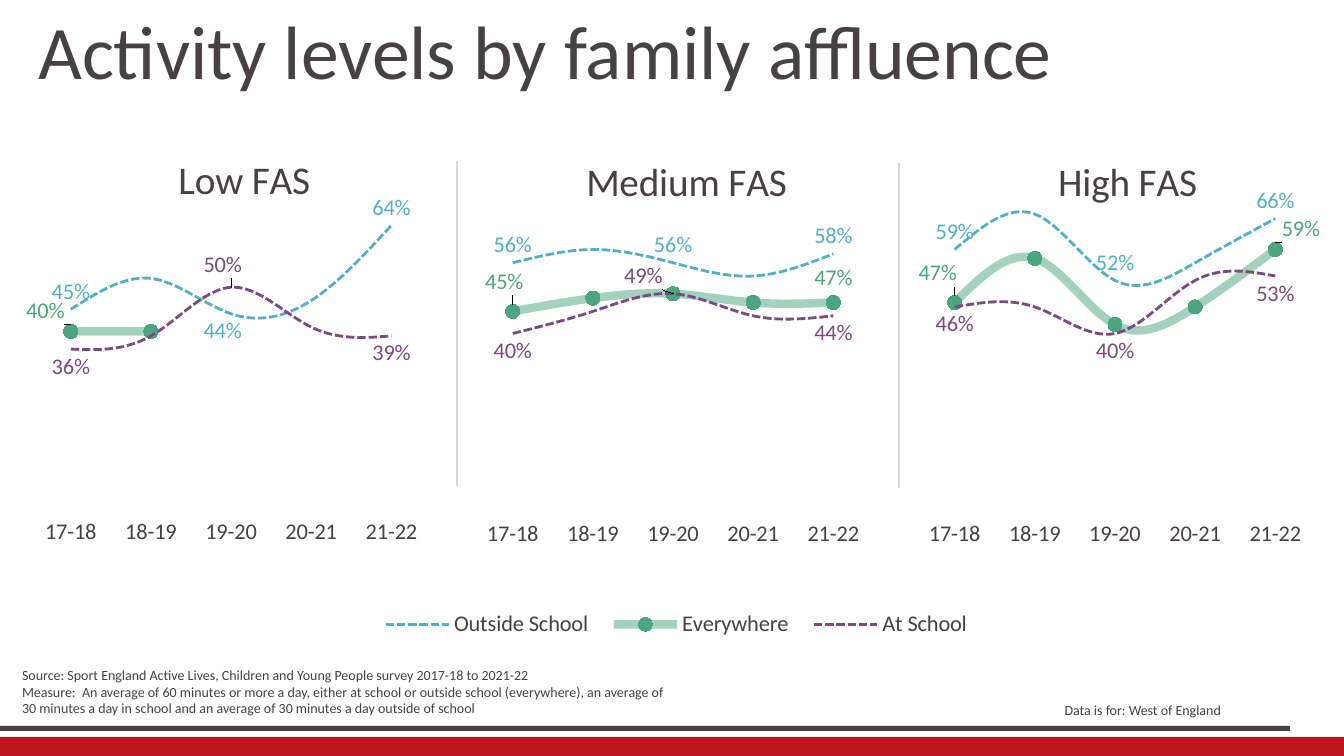
from pptx import Presentation
from pptx.chart.data import CategoryChartData
from pptx.dml.color import RGBColor
from pptx.enum.chart import (XL_CHART_TYPE, XL_LABEL_POSITION, XL_LEGEND_POSITION,
                             XL_MARKER_STYLE, XL_TICK_MARK)
from pptx.enum.dml import MSO_LINE
from pptx.enum.shapes import MSO_CONNECTOR, MSO_SHAPE
from pptx.enum.text import MSO_ANCHOR, PP_ALIGN
from pptx.oxml import parse_xml
from pptx.oxml.ns import nsdecls, qn
from pptx.util import Inches, Pt

COLORS = {"ink": "484043", "red": "BD1622", "rule": "DCD7D9",
          "outside": "53B0C2", "everywhere": "4BA57E", "school": "7C4982"}
ABOVE, BELOW = XL_LABEL_POSITION.ABOVE, XL_LABEL_POSITION.BELOW
LEFT, RIGHT, TOP = PP_ALIGN.LEFT, PP_ALIGN.RIGHT, MSO_ANCHOR.TOP
LINE_CHART, CIRCLE = XL_CHART_TYPE.LINE, XL_MARKER_STYLE.CIRCLE
NO_MARKER, NO_TICK = XL_MARKER_STYLE.NONE, XL_TICK_MARK.NONE
TICK_OUT, LEGEND_BOTTOM = XL_TICK_MARK.OUTSIDE, XL_LEGEND_POSITION.BOTTOM
DASH, RECTANGLE = MSO_LINE.SQUARE_DOT, MSO_SHAPE.RECTANGLE
STRAIGHT = MSO_CONNECTOR.STRAIGHT
GRID = 120
YEARS = ["17-18", "18-19", "19-20", "20-21", "21-22"]
PLOT = (0.02, 0.08, 0.94, 0.79)


def color(name):
    """Return the named palette colour."""
    return RGBColor.from_string(COLORS[name])


def set_layout(element, index, values, edge=True, inner=False):
    """Place a chart part at the given fractions of its chart."""
    for old in element.findall(qn("c:layout")):
        element.remove(old)
    tags = ['<c:layoutTarget val="inner"/>'] if inner else []
    if edge:
        tags += ['<c:xMode val="edge"/>', '<c:yMode val="edge"/>']
    tags += [f'<c:{key} val="{value}"/>' for key, value in zip("xywh", values)]
    element.insert(index, parse_xml(
        f'<c:layout {nsdecls("c")}><c:manualLayout>{"".join(tags)}'
        '</c:manualLayout></c:layout>'))


class SlideBuilder:
    """Holds the font and the current slide, measured in 120 columns and rows."""

    font_name = "Calibri"

    def __init__(self, presentation):
        """Add a slide with a title to the presentation."""
        self.column = presentation.slide_width / GRID
        self.row = presentation.slide_height / GRID
        self.slide = presentation.slides.add_slide(presentation.slide_layouts[5])
        self.shapes = self.slide.shapes

    def box(self, left, top, width, height):
        """Turn grid units into slide lengths."""
        return (round(left * self.column), round(top * self.row),
                round(width * self.column), round(height * self.row))

    def style(self, font, size, name="ink"):
        """Apply the slide font."""
        font.name, font.size, font.bold = self.font_name, Pt(size), False
        font.color.rgb = color(name)

    def fill_text(self, frame, text, size=10, align=LEFT, spacing=None):
        """Fill a text frame with one paragraph for each line."""
        frame.word_wrap, frame.vertical_anchor = True, TOP
        for number, line in enumerate(text.split("\n")):
            paragraph = frame.add_paragraph() if number else frame.paragraphs[0]
            paragraph.text, paragraph.alignment = line, align
            if spacing:
                paragraph.line_spacing = Pt(spacing)
            self.style(paragraph.runs[0].font, size)

    def title(self, text, *box, **formatting):
        """Place and fill the title placeholder."""
        shape = self.shapes.title
        shape.left, shape.top, shape.width, shape.height = self.box(*box)
        self.fill_text(shape.text_frame, text, **formatting)

    def text(self, text, *box, **formatting):
        """Add a text box."""
        shape = self.shapes.add_textbox(*self.box(*box))
        self.fill_text(shape.text_frame, text, **formatting)

    def bar(self, name, *box):
        """Add a filled bar."""
        shape = self.shapes.add_shape(RECTANGLE, *self.box(*box))
        shape.shadow.inherit = False
        shape.fill.solid()
        shape.fill.fore_color.rgb = color(name)
        shape.line.fill.background()

    def divider(self, left, top, height):
        """Add a vertical rule."""
        x, y, _, length = self.box(left, top, 0, height)
        line = self.shapes.add_connector(STRAIGHT, x, y, x, y + length)
        line.line.color.rgb, line.line.width = color("rule"), Pt(1.5)
        line._element.spPr.append(parse_xml(f'<a:effectLst {nsdecls("a")}/>'))

    def chart(self, categories, series, number_format, maximum, *box):
        """Add a smoothed line chart with hidden value axis."""
        data = CategoryChartData(number_format=number_format)
        data.categories = categories
        for title, _, values, _ in series:
            data.add_series(title, values)
        chart = self.shapes.add_chart(LINE_CHART, *self.box(*box), data).chart
        self.style(chart.font, 16)
        chart.has_title = chart.has_legend = False
        chart.plots[0].vary_by_categories = False
        axis = chart.value_axis
        axis.minimum_scale, axis.maximum_scale = 0, maximum
        axis.has_major_gridlines = axis.visible = False
        set_layout(chart._chartSpace.chart.plotArea, 0, PLOT, inner=True)
        for line, (_, name, _, labels) in zip(chart.plots[0].series, series):
            self.series(line, name, labels)
        return chart

    def series(self, line, name, labels):
        """Format one line and label its chosen points."""
        line.smooth = True
        line.format.line.color.rgb = color(name)
        line.marker.style = NO_MARKER
        if name == "everywhere":
            line.format.line.width = Pt(6)
            fill = line._element.spPr.find(".//" + qn("a:srgbClr"))
            fill.append(parse_xml(f'<a:alpha {nsdecls("a")} val="50000"/>'))
            line.marker.style, line.marker.size = CIRCLE, 10
            line.marker.format.fill.solid()
            line.marker.format.fill.fore_color.rgb = color(name)
            line.marker.format.line.color.rgb = color(name)
        else:
            line.format.line.width, line.format.line.dash_style = Pt(2), DASH
        for index, (position, *shift) in labels.items():
            label = line.points[index].data_label
            self.style(label.font, 16, name)
            label.position = position
            if shift:
                set_layout(label._dLbl, 1, shift, edge=False)
        if labels:
            line.data_labels.show_value = False

    def panel(self, title, title_left, series, *box):
        """Add one titled affluence chart."""
        rows = [(f"Series {number}", *row) for number, row in enumerate(series, 1)]
        chart = self.chart(YEARS, rows, "0%", 0.8, *box)
        chart.has_title = True
        paragraph = chart.chart_title.text_frame.paragraphs[0]
        run = paragraph.add_run()
        run.text = title
        self.style(run.font, 28)
        chart.chart_title.include_in_layout = False
        set_layout(chart.chart_title._element, 1, (title_left, 0.06))
        axis = chart.category_axis
        axis.major_tick_mark = TICK_OUT
        axis.format.line.fill.background()
        self.style(axis.tick_labels.font, 16)

    def legend(self, series, *box):
        """Add the shared legend, with its lines below the axis range."""
        chart = self.chart(range(1, 6), series, "General", 140, *box)
        chart.value_axis.minimum_scale = 130
        chart.category_axis.visible = False
        chart.category_axis.major_tick_mark = NO_TICK
        chart.has_legend = True
        chart.legend.position, chart.legend.include_in_layout = LEGEND_BOTTOM, False
        self.style(chart.legend.font, 16)
        set_layout(chart.legend._element, 1, (0.02, 0.1, 0.96, 0.8))


def main():
    """Build the family affluence slide."""
    presentation = Presentation()
    presentation.slide_width, presentation.slide_height = Inches(13.33), Inches(7.5)
    builder = SlideBuilder(presentation)
    builder.bar("red", 0, 116.96, GRID, 3.04)
    builder.bar("ink", 0, 115.2, 115.2, 0.8)
    builder.divider(40.77, 25.6, 51.52)
    builder.divider(80.28, 25.92, 51.52)
    builder.title("Activity levels by family affluence", 2.52, 4.48, 104.35, 12.64,
                  size=54, spacing=44)
    builder.legend([("Outside School", "outside", [91, 98, 93, 95, 100], {}),
                    ("Everywhere", "everywhere", [72, 76, 79, 81, 83], {}),
                    ("At School", "school", [66, 60, 74, 80, 75], {})],
                   31.68, 95.52, 57.42, 7.2)
    builder.text(
        "Source: Sport England Active Lives, Children and Young People survey 2017-18 to 2021-22\n"
        "Measure:  An average of 60 minutes or more a day, either at school or outside school "
        "(everywhere), an average of\n"
        "30 minutes a day in school and an average of 30 minutes a day outside of school",
        1.08, 104.96, 111.24, 9.76)
    builder.text("Data is for: West of England", 70.38, 110.56, 39.51, 4.32, align=RIGHT)
    above, below = (ABOVE,), (BELOW,)
    low = [("outside", [0.45, 0.52, 0.44, 0.47, 0.64],
            {0: above, 2: (BELOW, -0.02, 0), 4: above}),
           ("everywhere", [0.4, 0.4, None, None, None], {0: (ABOVE, -0.06, 0.01)}),
           ("school", [0.36, 0.39, 0.5, 0.41, 0.39],
            {0: below, 2: (ABOVE, -0.02, -0.01), 4: below})]
    medium = [("outside", [0.56, 0.59, 0.56, 0.53, 0.58], {0: above, 2: above, 4: above}),
              ("everywhere", [0.45, 0.48, 0.49, 0.47, 0.47],
               {0: (ABOVE, -0.02, -0.01), 4: above}),
              ("school", [0.4, 0.45, 0.49, 0.44, 0.44],
               {0: below, 2: (ABOVE, -0.07, 0), 4: below})]
    high = [("everywhere", [0.47, 0.57, 0.42, 0.46, 0.59],
             {0: (ABOVE, -0.04, -0.01), 4: (ABOVE, 0.06, 0.01)}),
            ("school", [0.46, 0.46, 0.4, 0.52, 0.53], {0: below, 2: below, 4: below}),
            ("outside", [0.59, 0.67, 0.52, 0.56, 0.66], {0: above, 2: above, 4: above})]
    panels = [("Low FAS", 0.35, low, 18.88), ("Medium FAS", 0.27, medium, 19.2),
              ("High FAS", 0.34, high, 19.2)]
    for number, (title, title_left, series, top) in enumerate(panels):
        builder.panel(title, title_left, series, 1.98 + 39.46 * number, top, 38.07, 71.04)
    presentation.save("out.pptx")


if __name__ == "__main__":
    main()
